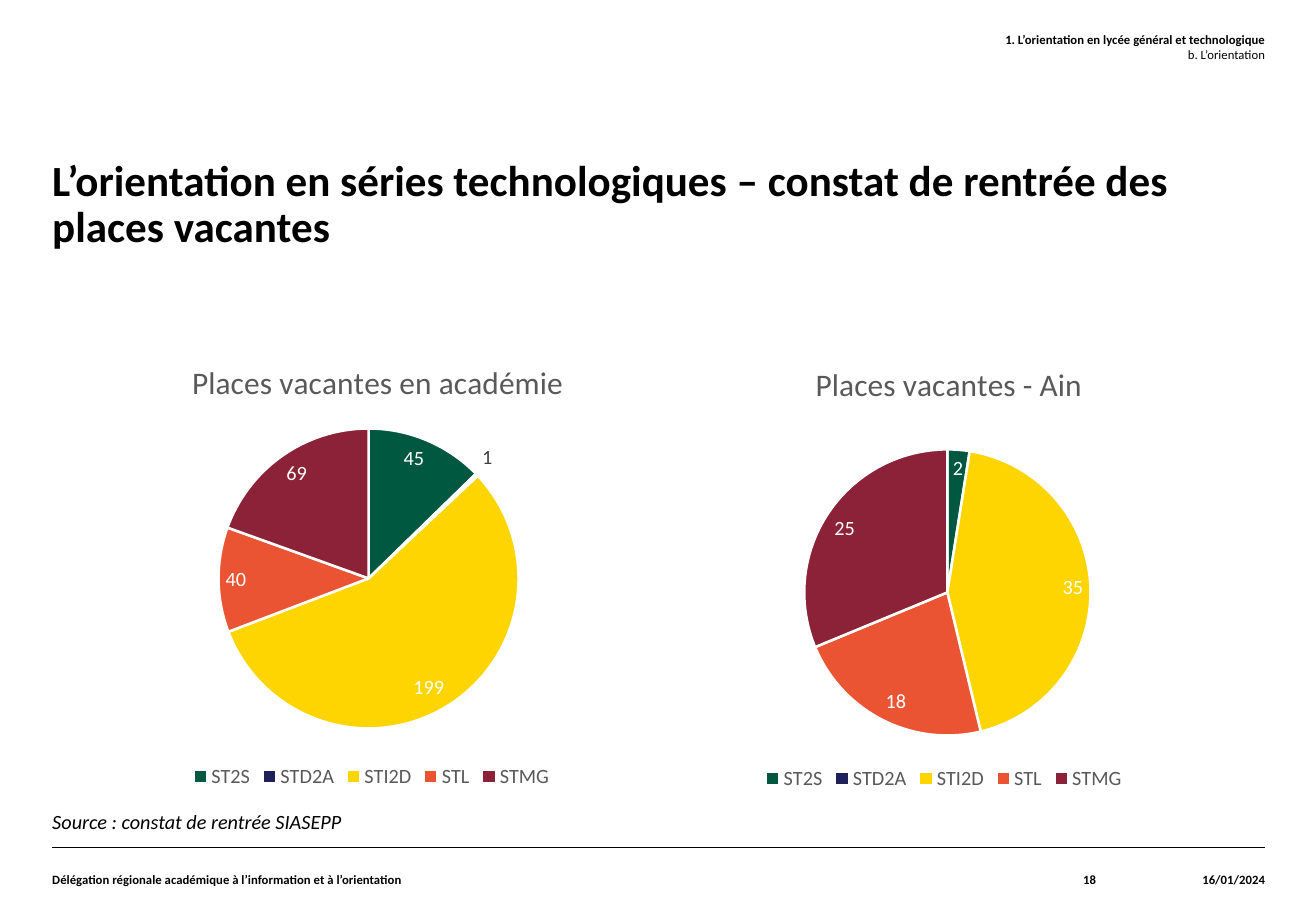
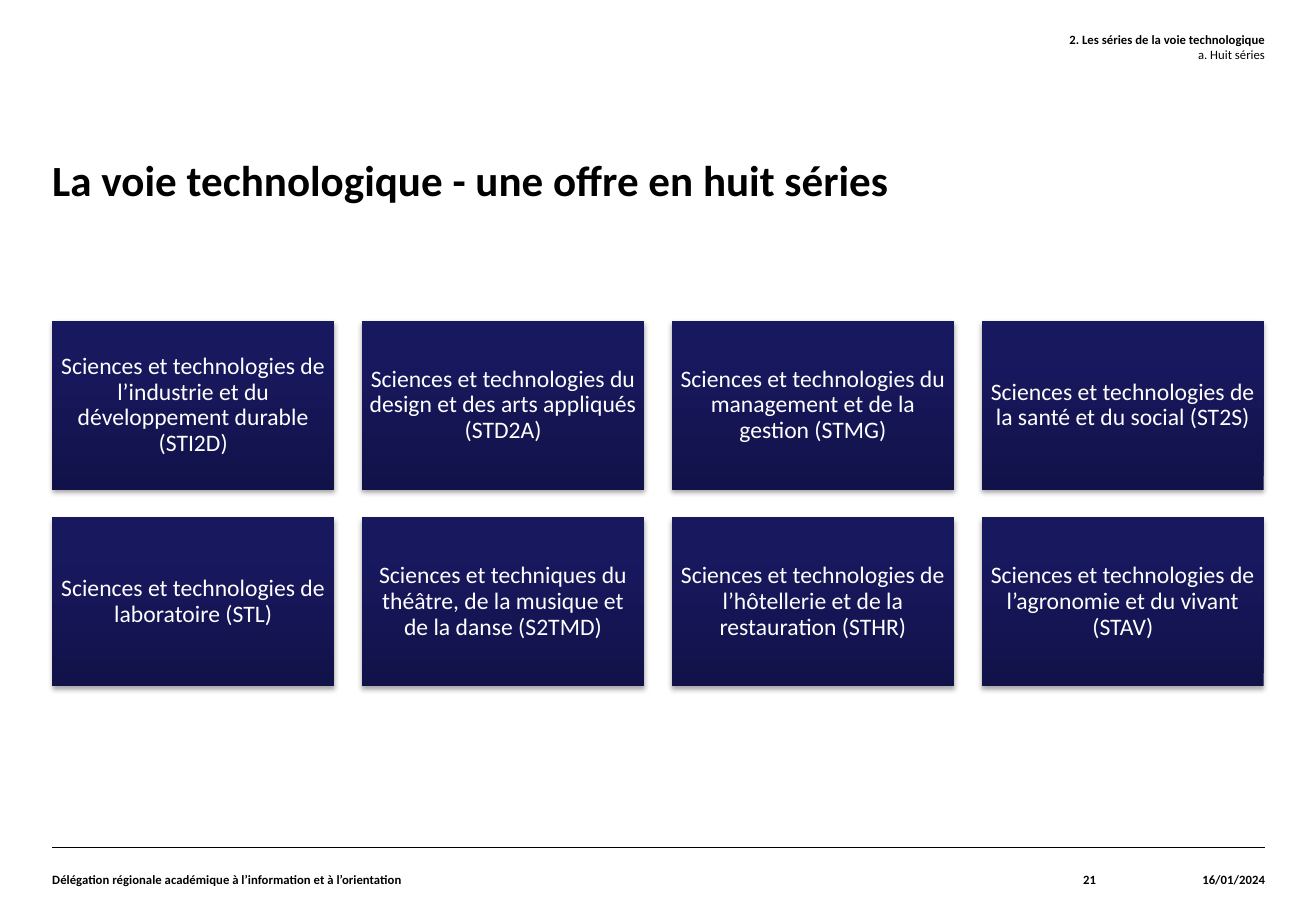
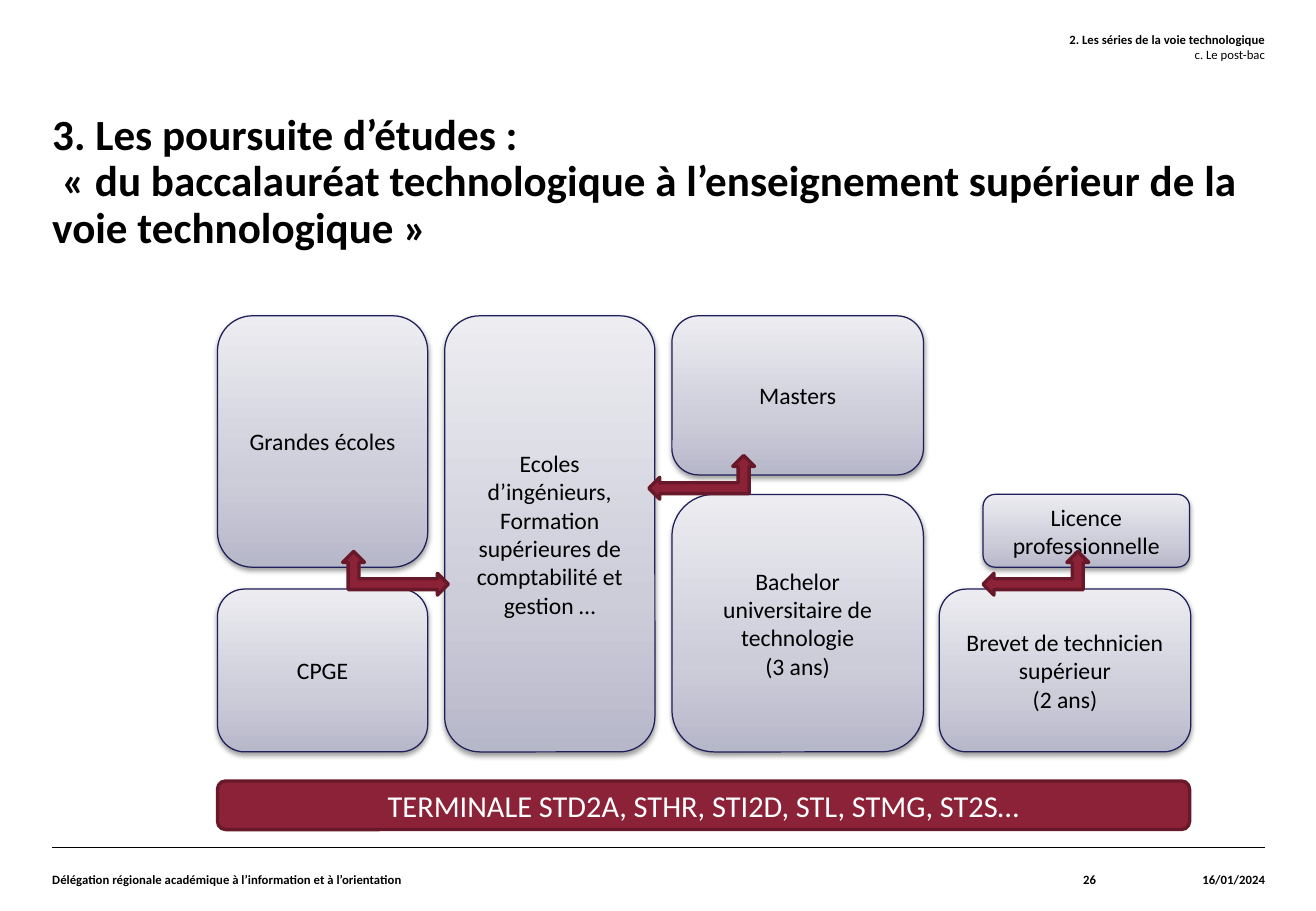
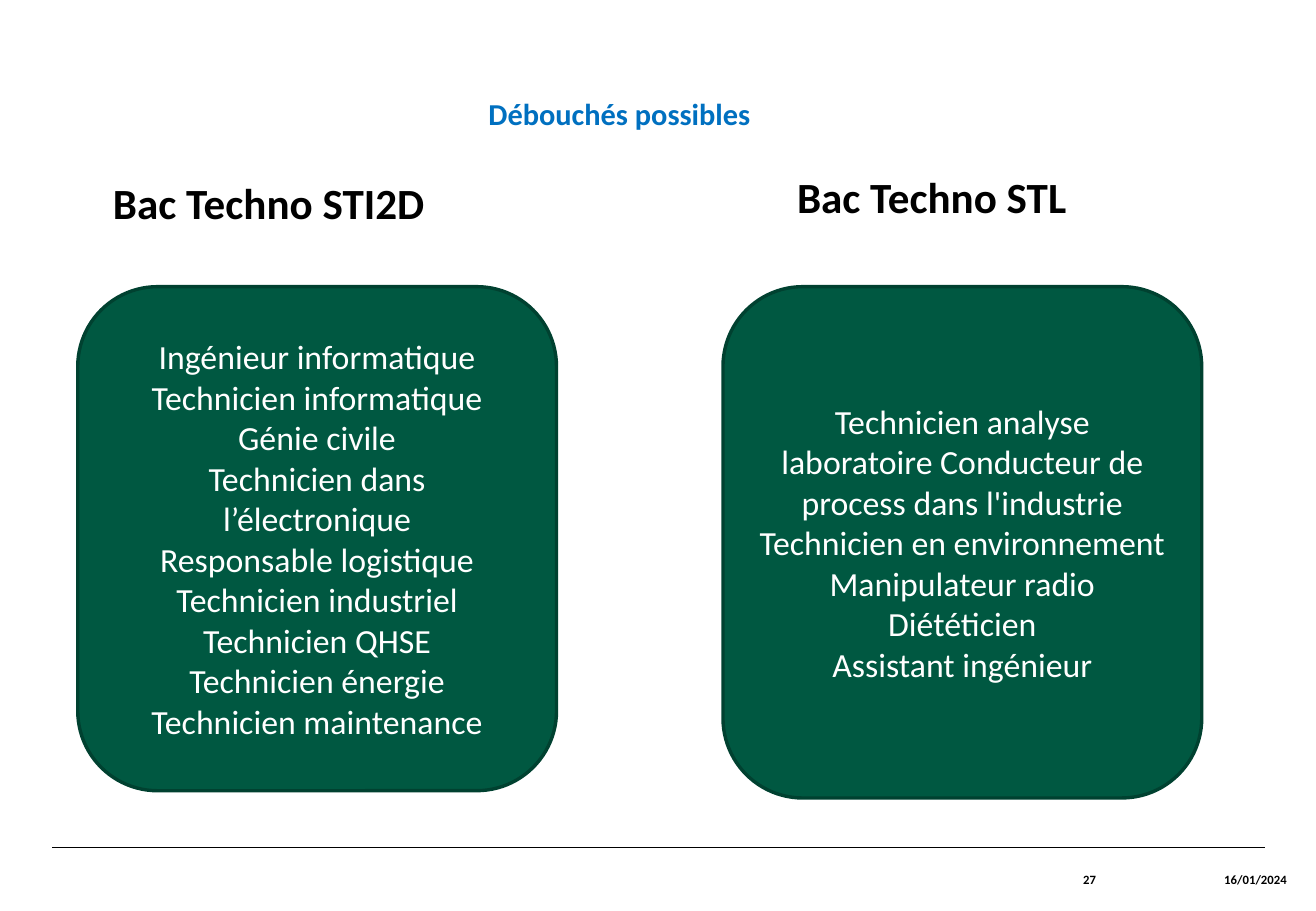
import copy
from dataclasses import dataclass

import pptx
import pptx.chart.data
import pptx.dml.color
import pptx.enum.chart
import pptx.enum.shapes
import pptx.enum.text
import pptx.oxml
import pptx.oxml.ns
import pptx.util

PX = 9144
SHAPE = pptx.enum.shapes.MSO_SHAPE
ALIGN = pptx.enum.text.PP_ALIGN
ANCHOR = pptx.enum.text.MSO_ANCHOR
LABEL = pptx.enum.chart.XL_LABEL_POSITION
qn = pptx.oxml.ns.qn
Pt = pptx.util.Pt


@dataclass(frozen=True)
class Theme:
    font: str = "Calibri"
    black: str = "000000"
    white: str = "FFFFFF"
    blue: str = "0070C0"
    navy: str = "1F1F59"
    green: str = "005841"
    green_edge: str = "004130"
    wine: str = "8C2237"
    wine_edge: str = "681929"
    chart_text: str = "595959"
    label_text: str = "404040"
    slices: tuple = ("005841", "21215A", "FFD500", "EA5433", "8C2237")
    tile_stops: tuple = ((0, "12124A"), (0.8, "18185F"), (1, "161661"))
    card_stops: tuple = ((0, "B7B7CA"), (0.35, "CDCDDA"), (1, "ECECF1"))
    title: float = 25.5
    chart_title: float = 18.6
    jobs: float = 20
    heading: float = 18
    body: float = 14
    note: float = 12
    small: float = 7.5


T = Theme()
LEFT, WIDTH = 43, 998
RIGHT = LEFT + WIDTH
RULE_Y, FOOT_H = 698, 52
DATE = "16/01/2024"
SERVICE = "Délégation régionale académique à l’information et à l’orientation"
SERIES = ("ST2S", "STD2A", "STI2D", "STL", "STMG")


def px(*values):
    return [round(v * PX) for v in values]


def rgb(value):
    return pptx.dml.color.RGBColor.from_string(value)


def apply(obj, values):
    for name, value in values.items():
        setattr(obj, name, value)


def style_font(font, size, color, bold=False, italic=False):
    apply(font, {"name": T.font, "size": Pt(size), "bold": bold, "italic": italic})
    font.color.rgb = rgb(color)


def write(tf, lines, size, color=T.black, bold=False, italic=False,
          align=ALIGN.LEFT, anchor=ANCHOR.TOP, spacing=None, inset=None):
    apply(tf, {"word_wrap": True, "vertical_anchor": anchor})
    if inset is not None:
        sides = ("left", "top", "right", "bottom")
        apply(tf, {f"margin_{side}": inset * PX for side in sides})
    for i, line in enumerate(lines):
        p = tf.add_paragraph() if i else tf.paragraphs[0]
        apply(p, {"alignment": align, "line_spacing": spacing})
        r = p.add_run()
        r.text = line
        style_font(r.font, size, color, bold, italic)


def add_text(s, box, lines, size, **style):
    tf = s.shapes.add_textbox(*px(*box)).text_frame
    write(tf, lines, size, inset=0, **style)
    return tf


def add_title(s, lines, box=(LEFT, 131, WIDTH, 105)):
    add_text(s, box, lines, T.title, bold=True, spacing=0.9)


def add_header(s, chapter, section):
    tf = add_text(s, (392, 26, RIGHT - 392, 52), [chapter, section], T.small,
                  bold=True, align=ALIGN.RIGHT)
    tf.paragraphs[1].runs[0].font.bold = False


def add_footer(s, number, service=SERVICE, date_x=902):
    line = s.shapes.add_connector(pptx.enum.shapes.MSO_CONNECTOR.STRAIGHT,
                                  *px(LEFT, RULE_Y, RIGHT, RULE_Y))
    line.line.width = Pt(0.8)
    line.line.color.rgb = rgb(T.black)
    line.element.spPr.append(pptx.oxml.parse_xml(
        f'<a:effectLst {pptx.oxml.ns.nsdecls("a")}/>'))
    parts = [(742, 160, str(number), ALIGN.RIGHT), (date_x, 139, DATE, ALIGN.RIGHT)]
    if service:
        parts.append((LEFT, 699, service, ALIGN.LEFT))
    for x, w, text, align in parts:
        add_text(s, (x, RULE_Y, w, FOOT_H), [text], T.small, bold=True,
                 align=align, anchor=ANCHOR.MIDDLE)


def fill_gradient(sp, stops):
    sp.fill.gradient()
    sp.fill.gradient_angle = 90
    items = sp.element.spPr.find(".//" + qn("a:gsLst"))
    items.append(copy.deepcopy(items[0]))
    for stop, (position, color) in zip(sp.fill.gradient_stops, stops):
        stop.position = position
        stop.color.rgb = rgb(color)


def add_shadow(sp, opacity, distance):
    sp.element.spPr.find(qn("a:effectLst")).append(pptx.oxml.parse_xml(
        f'<a:outerShdw {pptx.oxml.ns.nsdecls("a")} blurRad="{Pt(3.1)}" '
        f'dist="{Pt(distance)}" dir="5400000" rotWithShape="0">'
        f'<a:srgbClr val="{T.black}"><a:alpha val="{opacity * 1000}"/></a:srgbClr>'
        '</a:outerShdw>'))


def add_block(s, kind, box, fill, edge=None, edge_width=2):
    sp = s.shapes.add_shape(kind, *px(*box))
    sp.shadow.inherit = False
    if isinstance(fill, str):
        sp.fill.solid()
        sp.fill.fore_color.rgb = rgb(fill)
    else:
        fill_gradient(sp, fill)
    if edge:
        sp.line.color.rgb = rgb(edge)
        sp.line.width = Pt(edge_width)
    else:
        sp.line.fill.background()
    return sp


def write_centred(sp, lines, size, color, **style):
    write(sp.text_frame, lines, size, color=color, align=ALIGN.CENTER,
          anchor=ANCHOR.MIDDLE, **style)


def add_tile(s, box, text):
    sp = add_block(s, SHAPE.RECTANGLE, box, T.tile_stops)
    add_shadow(sp, 35, 1.8)
    write_centred(sp, [text], T.body, T.white, spacing=0.9, inset=6)


def add_card(s, box, lines):
    sp = add_block(s, SHAPE.ROUNDED_RECTANGLE, box, T.card_stops, T.navy, 0.75)
    add_shadow(sp, 38, 1.6)
    write_centred(sp, lines, T.body, T.black)


def add_arrow(s, x, y, flipped=False):
    sp = add_block(s, SHAPE.LEFT_UP_ARROW, (x, y, 87, 36), T.wine, T.wine_edge)
    if flipped:
        sp.element.spPr.xfrm.set("flipH", "1")


def add_panel(s, box, fill, edge, lines, size):
    sp = add_block(s, SHAPE.ROUNDED_RECTANGLE, box, fill, edge)
    write_centred(sp, lines, size, T.white)


def set_layout(parent, index, inner=False, **place):
    for old in parent.findall(qn("c:layout")):
        parent.remove(old)
    modes = "".join(f'<c:{k}Mode val="edge"/>' for k in ("x", "y"))
    values = "".join(f'<c:{k} val="{v}"/>' for k, v in place.items())
    target = '<c:layoutTarget val="inner"/>' if inner else ""
    parent.insert(index, pptx.oxml.parse_xml(
        f'<c:layout {pptx.oxml.ns.nsdecls("c")}><c:manualLayout>'
        f'{target}{modes}{values}</c:manualLayout></c:layout>'))


def add_pie(s, x, y, title, values, title_at, pie_at):
    data = pptx.chart.data.CategoryChartData()
    data.categories = SERIES
    data.add_series("Series 1", values)
    chart = s.shapes.add_chart(pptx.enum.chart.XL_CHART_TYPE.PIE,
                               *px(x, y, 526, 380), data).chart
    style_font(chart.font, T.note, T.chart_text)
    apply(chart, {"has_title": True, "has_legend": True})
    p = chart.chart_title.text_frame.paragraphs[0]
    r = p.add_run()
    r.text = title
    style_font(r.font, T.chart_title, T.chart_text)
    apply(chart.legend, {"position": pptx.enum.chart.XL_LEGEND_POSITION.BOTTOM,
                         "include_in_layout": False})
    style_font(chart.legend.font, T.note, T.chart_text)

    plot = chart.plots[0]
    apply(plot, {"vary_by_categories": True, "has_data_labels": True})
    series = plot.series[0]
    labels = series.data_labels
    apply(labels, {"show_value": True, "position": LABEL.INSIDE_END,
                   "number_format": "#", "number_format_is_linked": False})
    style_font(labels.font, T.note, T.white)
    for i, (value, color) in enumerate(zip(values, T.slices)):
        point = series.points[i]
        point.format.fill.solid()
        point.format.fill.fore_color.rgb = rgb(color)
        point.format.line.color.rgb = rgb(T.white)
        point.format.line.width = Pt(1.5)
        if value == 1:
            style_font(point.data_label.font, T.note, T.label_text)
            point.data_label.position = LABEL.OUTSIDE_END

    root = chart.element
    set_layout(root.find(".//" + qn("c:title")), 1, **title_at)
    set_layout(root.find(".//" + qn("c:plotArea")), 0, inner=True, **pie_at)


def build_vacancies(s):
    add_header(s, "1. L’orientation en lycée général et technologique", "b. L’orientation")
    add_title(s, ["L’orientation en séries technologiques – constat de rentrée "
                  "des places vacantes"])
    add_pie(s, 43, 273, "Places vacantes en académie", (45, 1, 199, 40, 69),
            {"x": 0.21, "y": 0.05}, {"x": 0.26, "y": 0.21, "w": 0.47, "h": 0.65})
    add_pie(s, 514, 275, "Places vacantes - Ain", (2, 0, 35, 18, 25),
            {"x": 0.29, "y": 0.05}, {"x": 0.28, "y": 0.25, "w": 0.45, "h": 0.62})
    add_text(s, (LEFT, 666, WIDTH, 32), ["Source : constat de rentrée SIASEPP"],
             T.note, italic=True)
    add_footer(s, 18)


def build_series(s):
    add_header(s, "2. Les séries de la voie technologique", "a. Huit séries")
    add_title(s, ["La voie technologique - une offre en huit séries"])
    names = (
        "Sciences et technologies de l’industrie et du développement durable (STI2D)",
        "Sciences et technologies du design et des arts appliqués (STD2A)",
        "Sciences et technologies du management et de la gestion (STMG)",
        "Sciences et technologies de la santé et du social (ST2S)",
        "Sciences et technologies de laboratoire (STL)",
        "Sciences et techniques du théâtre, de la musique et de la danse (S2TMD)",
        "Sciences et technologies de l’hôtellerie et de la restauration (STHR)",
        "Sciences et technologies de l’agronomie et du vivant (STAV)",
    )
    w, h, gap = 232, 139, 23
    for i, name in enumerate(names):
        row, col = divmod(i, 4)
        add_tile(s, (LEFT + col * (w + gap), 264 + row * (h + gap), w, h), name)
    add_footer(s, 21)


def build_studies(s):
    add_header(s, "2. Les séries de la voie technologique", "c. Le post-bac")
    add_title(s, ["3. Les poursuite d’études :",
                  " «\u00a0du baccalauréat technologique à l’enseignement supérieur "
                  "de la voie technologique\u00a0»".replace("\u00a0", " ")],
              (LEFT, 93, WIDTH, 144))
    top, bottom = 260, 619
    cards = (
        (179, 485, 173, bottom, ["CPGE"]),
        (366, top, 173, bottom, ["Ecoles d’ingénieurs, Formation supérieures "
                                 "de comptabilité et gestion …"]),
        (553, 407, 207, bottom, ["Bachelor universitaire de technologie", "(3 ans)"]),
        (773, 485, 207, bottom, ["Brevet de technicien supérieur", "(2 ans)"]),
        (553, top, 207, 391, ["Masters"]),
        (809, 407, 170, 467, ["Licence professionnelle"]),
        (179, top, 173, 467, ["Grandes écoles"]),
    )
    for x, y, w, end, lines in cards:
        add_card(s, (x, y, w, end - y), lines)
    for x, y, flipped in ((534, 375, False), (282, 454, True), (809, 454, False)):
        add_arrow(s, x, y, flipped)
    add_panel(s, (179, 643, 800, 40), T.wine, T.wine_edge,
              ["TERMINALE STD2A, STHR, STI2D, STL, STMG, ST2S…"], T.heading)
    add_footer(s, 26)


def build_careers(s):
    add_text(s, (402, 78, 260, 30), ["Débouchés possibles"], T.heading,
             color=T.blue, bold=True)
    add_title(s, ["Bac Techno STI2D"], (93, 150, 360, 55))
    add_title(s, ["Bac Techno STL"], (656, 145, 307, 52))
    panels = (
        (64, 415, ["Ingénieur informatique", "Technicien informatique", "Génie civile",
                   "Technicien dans l’électronique", "Responsable logistique",
                   "Technicien industriel", "Technicien QHSE", "Technicien énergie",
                   "Technicien maintenance"]),
        (595, 421, ["Technicien analyse laboratoire Conducteur de process dans l'industrie",
                    "Technicien en environnement", "Manipulateur radio", "Diététicien",
                    "Assistant ingénieur"]),
    )
    for x, h, jobs in panels:
        add_panel(s, (x, 236, 394, h), T.green, T.green_edge, jobs, T.jobs)
    add_footer(s, 27, service=None, date_x=920)


def main():
    prs = pptx.Presentation()
    prs.slide_width, prs.slide_height = px(1083, 750)
    for build in (build_vacancies, build_series, build_studies, build_careers):
        build(prs.slides.add_slide(prs.slide_layouts[6]))
    prs.save("out.pptx")


if __name__ == "__main__":
    main()
